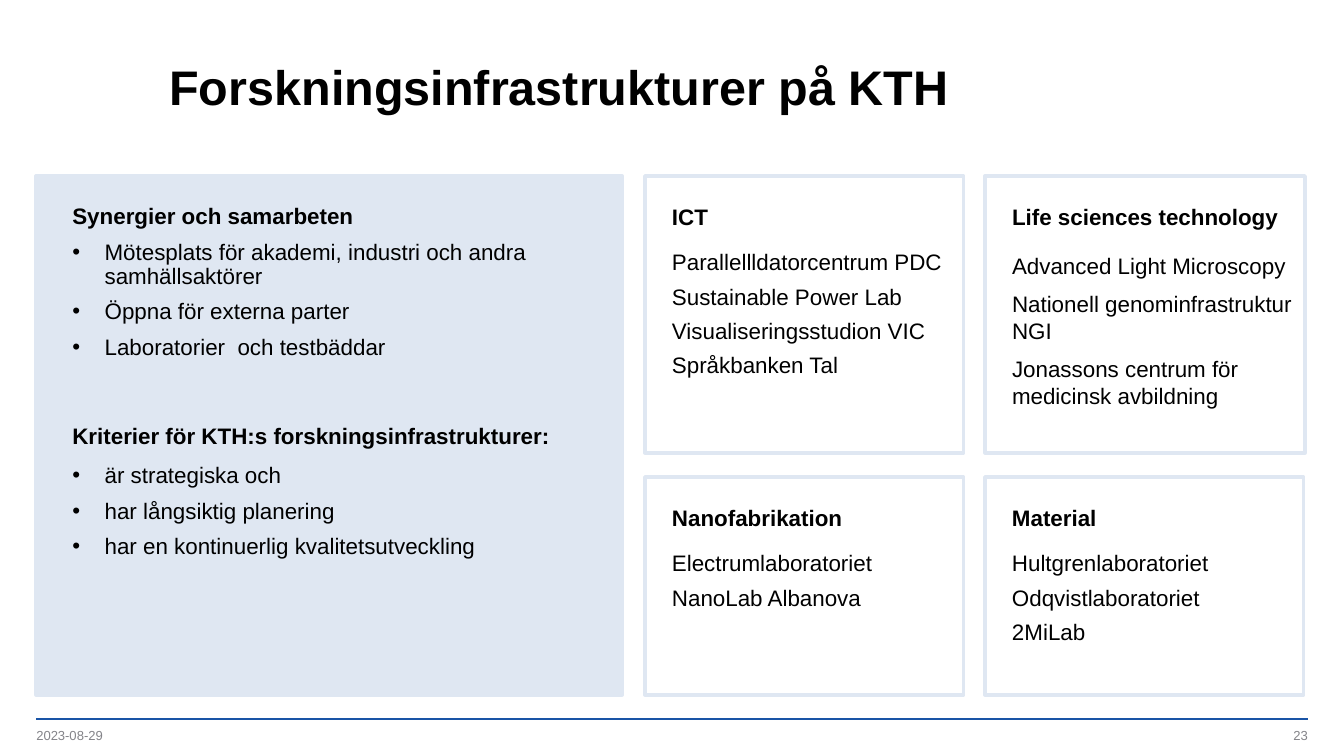
from lxml import etree
from pptx import Presentation
from pptx import util as u
from pptx.dml import color
from pptx.enum import shapes, text
from pptx.oxml import ns

PALE, BLUE, GREY, BLACK = "DFE7F2", "1954A6", "848489", "000000"


def paint(part, shade):
    """Give a fill, line fill or font a solid colour."""
    part.rgb = color.RGBColor.from_string(shade)


def style(para, size, bold=False, shade=BLACK):
    """Format the font of each run in a paragraph."""
    for run in para.runs:
        run.font.name = "Arial"
        run.font.size = u.Pt(size)
        run.font.bold = bold
        paint(run.font.color, shade)


def bullet(para):
    """Add a round bullet with a hanging indent."""
    props = para._p.get_or_add_pPr()
    hang = u.Inches(0.24)
    props.set("marL", str(hang))
    props.set("indent", str(-hang))
    etree.SubElement(props, ns.qn("a:buFont")).set("typeface", "Arial")
    etree.SubElement(props, ns.qn("a:buChar")).set("char", "•")


def frame(slide, box, fill=None):
    """Draw a pale-edged rectangle and return it."""
    rect = slide.shapes.add_shape(
        shapes.MSO_SHAPE.RECTANGLE, *map(u.Inches, box))
    rect.shadow.inherit = False
    if fill:
        rect.fill.solid()
        paint(rect.fill.fore_color, fill)
    else:
        rect.fill.background()
    paint(rect.line.color, PALE)
    rect.line.width = u.Pt(2)
    return rect


def heading(slide, box, words):
    """Place and format the title."""
    title = slide.shapes.title
    title.left, title.top, title.width, title.height = map(u.Inches, box)
    body = title.text_frame
    body.text = words
    body.vertical_anchor = text.MSO_ANCHOR.MIDDLE
    para = body.paragraphs[0]
    para.alignment = text.PP_ALIGN.LEFT
    para.line_spacing = u.Pt(30)
    style(para, 26, True)


def panel(slide, box, groups):
    """Draw the filled panel with its headed bullet lists."""
    frame(slide, box, PALE)
    left, top, width, height = box
    area = (left + 0.17, top + 0.17, width - 0.36, height - 0.4)
    body = slide.shapes.add_textbox(*map(u.Inches, area)).text_frame
    body.word_wrap = True
    for part, (head, items) in enumerate(groups):
        para = body.add_paragraph() if part else body.paragraphs[0]
        para.text = head
        para.line_spacing = 0.9
        if part:
            para.space_before, para.space_after = u.Pt(35), u.Pt(2)
        style(para, 12, True)
        for item in items:
            para = body.add_paragraph()
            para.text = item
            para.line_spacing = 0.9
            para.space_before = u.Pt(6)
            bullet(para)
            style(para, 12)


def card(slide, box, head, items, gap=4):
    """Draw an outlined card with a heading and its lines."""
    body = frame(slide, box).text_frame
    body.word_wrap = True
    body.vertical_anchor = text.MSO_ANCHOR.TOP
    body.margin_left = body.margin_top = u.Inches(0.2)
    body.margin_right, body.margin_bottom = 0, u.Inches(0.16)
    for row, words in enumerate([head, *items]):
        para = body.add_paragraph() if row else body.paragraphs[0]
        para.text = words
        para.alignment = text.PP_ALIGN.LEFT
        if row:
            para.space_before = u.Pt(gap)
        else:
            para.space_after = u.Pt(6)
        style(para, 12, not row)


def footer(slide, box, date, number):
    """Draw the rule with the date and page number below it."""
    left, top, width, height = box
    rule = slide.shapes.add_connector(
        shapes.MSO_CONNECTOR.STRAIGHT,
        *map(u.Inches, (left, top, left + width, top)))
    paint(rule.line.color, BLUE)
    rule.line.width = u.Pt(1)
    etree.SubElement(rule._element.spPr, ns.qn("a:effectLst"))
    wide = 2.25
    for words, start, side in (
            (date, left, text.PP_ALIGN.LEFT),
            (number, left + width - wide, text.PP_ALIGN.RIGHT)):
        area = (start, top + 0.06, wide, height - 0.06)
        body = slide.shapes.add_textbox(*map(u.Inches, area)).text_frame
        body.word_wrap = True
        body.margin_left = body.margin_right = 0
        body.margin_top = body.margin_bottom = 0
        body.vertical_anchor = text.MSO_ANCHOR.MIDDLE
        para = body.paragraphs[0]
        para.text = words
        para.alignment = side
        style(para, 7, shade=GREY)


def main():
    """Build and save the slide."""
    deck = Presentation()
    deck.slide_width = u.Inches(10)
    deck.slide_height = deck.slide_width * 9 // 16
    slide = deck.slides.add_slide(deck.slide_layouts.get_by_name("Title Only"))
    heading(slide, (1.16, 0.28, 8.26, 0.74), "Forskningsinfrastrukturer på KTH")
    panel(slide, (0.27, 1.31, 4.36, 3.86), [
        ("Synergier och samarbeten", [
            "Mötesplats för akademi, industri och andra samhällsaktörer",
            "Öppna för externa parter",
            "Laboratorier  och testbäddar"]),
        ("Kriterier för KTH:s forskningsinfrastrukturer:", [
            "är strategiska och",
            "har långsiktig planering",
            "har en kontinuerlig kvalitetsutveckling"])])
    wide, space = 2.37, 0.16
    near, high, tall, short = 4.8, 1.31, 2.06, 1.62
    far, low = near + wide + space, high + tall + 0.18
    card(slide, (near, high, wide, tall), "ICT", [
        "Parallellldatorcentrum PDC", "Sustainable Power Lab",
        "Visualiseringsstudion VIC", "Språkbanken Tal"])
    card(slide, (far, high, wide + 0.01, tall), "Life sciences technology", [
        "Advanced Light Microscopy", "Nationell genominfrastruktur NGI",
        "Jonassons centrum för medicinsk avbildning"], 6)
    card(slide, (near, low, wide, short), "Nanofabrikation", [
        "Electrumlaboratoriet", "NanoLab Albanova"])
    card(slide, (far, low, wide, short), "Material", [
        "Hultgrenlaboratoriet", "Odqvistlaboratoriet", "2MiLab"])
    footer(slide, (0.27, 5.35, 9.46, 0.19), "2023-08-29", "23")
    deck.save("out.pptx")


if __name__ == "__main__":
    main()
